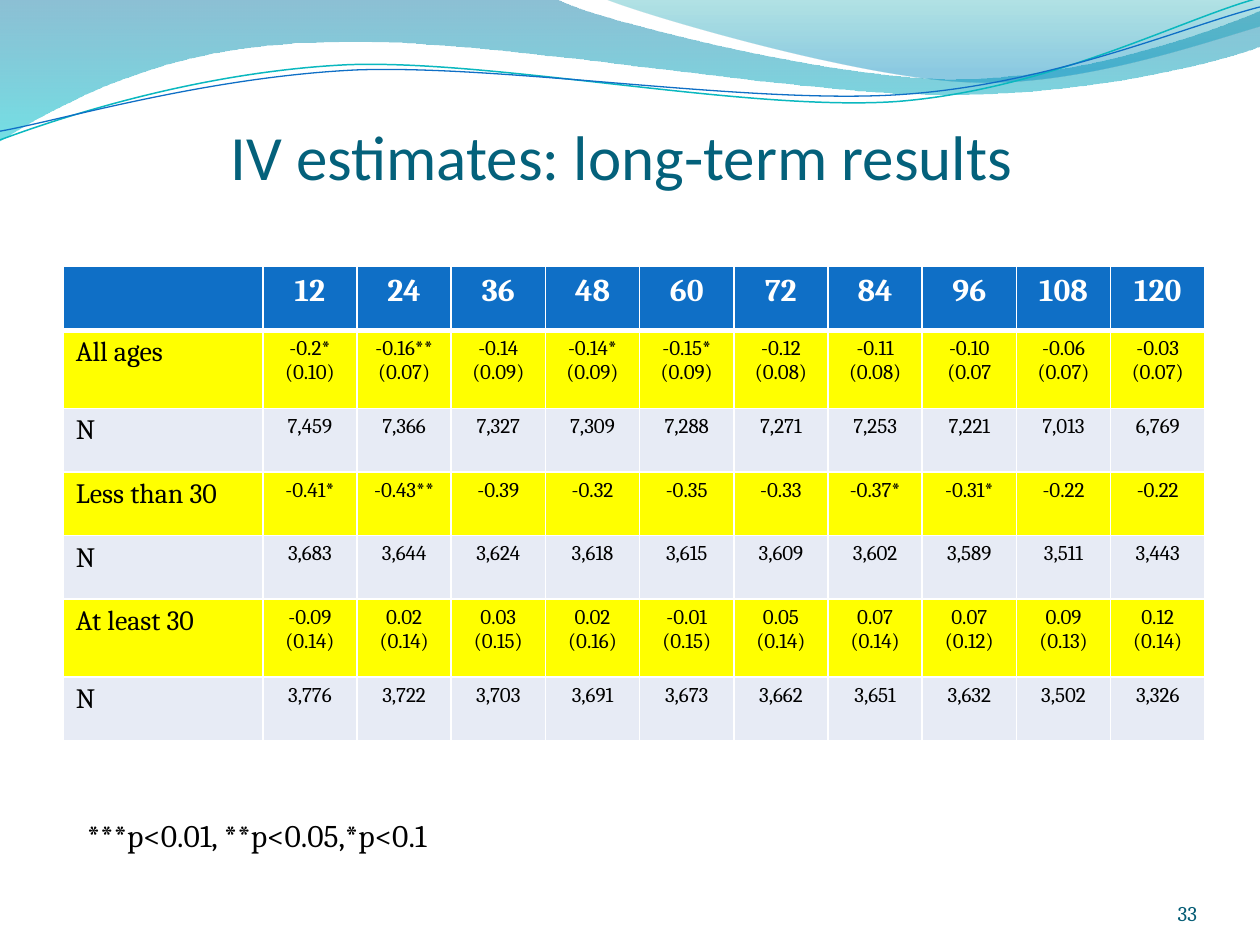
from math import cos, radians, sin

from lxml.etree import SubElement as Sub
from pptx import Presentation
from pptx.dml.color import RGBColor as Rgb
from pptx.enum.text import MSO_ANCHOR as Anchor, PP_ALIGN as Align
from pptx.oxml.ns import qn
from pptx.util import Pt

HUES = {
    "white": "FFFFFF", "black": "000000", "blue": "0F6FC6", "teal": "0AB8BF",
    "title": "04617B", "page": "045C75", "mark": "FFFF00", "pale": "E7EBF5",
    "deep": "0074A1", "cyan": "00C6CF", "sea": "00A1A9", "sky": "008BBF",
}

BANDS = [
    ([(0, -1), (317, -1), (343, 12, 478, 45, 546, 45), (614, 45, 690, 19, 720, 6),
      (721, 26), (708, 32, 626, 55, 537, 54), (448, 54, 275, 20, 185, 24),
      (93, 25, 33, 60, -1, 81), (0, -1)],
     [("deep", 0, 45), ("cyan", 1, 55)]),
    ([(345, -1), (366, 8, 491, 45, 554, 47), (616, 50, 692, 23, 720, 15), (720, 0),
      (345, -1)],
     [("sea", 0, 30), ("sky", 0.8, 45)]),
]
CURVES = [
    ([(0, 80), (35, 67, 114, 41, 199, 37), (284, 34, 427, 64, 513, 58),
      (600, 51, 675, 11, 719, -1)], "teal", 0.85),
    ([(0, 75), (34, 69, 118, 44, 204, 40), (290, 37, 430, 60, 516, 54),
      (602, 48, 677, 15, 720, 4)], "blue", 0.75),
]
TILT = 2.7

HEAD = ["", "12", "24", "36", "48", "60", "72", "84", "96", "108", "120"]
ROWS = [
    ["All ages", "-0.2*\n(0.10)", "-0.16**\n(0.07)", "-0.14\n(0.09)", "-0.14*\n(0.09)",
     "-0.15*\n(0.09)", "-0.12\n(0.08)", "-0.11\n(0.08)", "-0.10\n(0.07",
     "-0.06\n(0.07)", "-0.03\n(0.07)"],
    ["N", "7,459", "7,366", "7,327", "7,309", "7,288", "7,271", "7,253", "7,221",
     "7,013", "6,769"],
    ["Less than 30", "-0.41*", "-0.43**", "-0.39", "-0.32", "-0.35", "-0.33", "-0.37*",
     "-0.31*", "-0.22", "-0.22"],
    ["N", "3,683", "3,644", "3,624", "3,618", "3,615", "3,609", "3,602", "3,589",
     "3,511", "3,443"],
    ["At least 30", "-0.09\n(0.14)", "0.02\n(0.14)", "0.03\n(0.15)", "0.02\n(0.16)",
     "-0.01\n(0.15)", "0.05\n(0.14)", "0.07\n(0.14)", "0.07\n(0.12)",
     "0.09\n(0.13)", "0.12\n(0.14)"],
    ["N", "3,776", "3,722", "3,703", "3,691", "3,673", "3,662", "3,651", "3,632",
     "3,502", "3,326"],
]


def hue(name):
    return Rgb.from_string(HUES[name])


def write(frame, text, size=12, face="Cambria", color="black", bold=False, align=Align.LEFT):
    frame.text = text
    for para in frame.paragraphs:
        para.alignment = align
        for run in para.runs:
            font = run.font
            font.size, font.name, font.bold = Pt(size), face, bold
            font.color.rgb = hue(color)


def label(slide, box, text, inset=(7.2, 3.6, 7.2, 3.6), anchor=Anchor.TOP, **form):
    frame = slide.shapes.add_textbox(*map(Pt, box)).text_frame
    frame.word_wrap = True
    frame.vertical_anchor = anchor
    (frame.margin_left, frame.margin_top,
     frame.margin_right, frame.margin_bottom) = map(Pt, inset)
    write(frame, text, **form)


def turn(dot, box, angle):
    mid_x, mid_y = box[2] / 2, box[3] / 2
    x, y = dot[0] - mid_x, dot[1] - mid_y
    c, s = cos(radians(angle)), sin(radians(angle))
    return Pt(box[0] + mid_x + x * c - y * s), Pt(box[1] + mid_y + x * s + y * c)


def draw(slide, box, steps, close, tilt=0):
    dots = [turn(step[i:i + 2], box, tilt)
            for step in steps for i in range(0, len(step), 2)]
    pen = slide.shapes.build_freeform(*dots[0])
    pen.add_line_segments(dots[1:], close=close)
    shape = pen.convert_to_shape()
    shape.shadow.inherit = False
    shape.rotation = -tilt % 360
    lines = iter(list(shape._element.iter(qn("a:lnTo"))))
    for step in steps[1:]:
        trio = [next(lines) for _ in range(len(step) // 2)]
        if len(trio) == 3:
            trio[0].tag = qn("a:cubicBezTo")
            for line in trio[1:]:
                trio[0].append(line[0])
                line.getparent().remove(line)
    return shape


def waves(slide, box):
    for steps, stops in BANDS:
        shape = draw(slide, box, steps, True)
        shape.line.fill.background()
        shape.fill.gradient()
        shape.fill.gradient_angle = 270
        for stop, (name, place, _) in zip(shape.fill.gradient_stops, stops):
            stop.color.rgb = hue(name)
            stop.position = place
        tints = shape._element.spPr.iter(qn("a:srgbClr"))
        for tint, (_, _, alpha) in zip(list(tints), stops):
            Sub(tint, qn("a:alpha"), val=str(alpha * 1000))
    for steps, name, width in CURVES:
        shape = draw(slide, box, steps, False, TILT)
        shape.fill.background()
        shape.line.color.rgb = hue(name)
        shape.line.width = Pt(width)


def edge(cell, **sides):
    props = cell._tc.get_or_add_tcPr()
    for side in "LRTB":
        line = Sub(props, qn("a:ln" + side), w=str(Pt(sides.get(side, 1))))
        Sub(Sub(line, qn("a:solidFill")), qn("a:srgbClr"), val=HUES["white"])


def grid(slide, box):
    first, tall, plain = 114, 44.6, 36.35
    data = [HEAD] + ROWS
    table = slide.shapes.add_table(len(data), len(HEAD), *map(Pt, box)).table
    table.first_row = table.horz_banding = False
    for c, col in enumerate(table.columns):
        col.width = Pt(first if c == 0 else (box[2] - first) / (len(HEAD) - 1))
    for r, row in enumerate(data):
        table.rows[r].height = Pt(tall if "\n" in row[1] else plain)
        fill = "blue" if r == 0 else "mark" if r % 2 else "pale"
        for c, text in enumerate(row):
            cell = table.cell(r, c)
            edge(cell, T=3 if r == 1 else 1, B=3 if r == 0 else 1)
            cell.fill.solid()
            cell.fill.fore_color.rgb = hue(fill)
            write(cell.text_frame, text, size=18 if r == 0 else 12 if c else 16,
                  color="black" if r else "white", bold=r == 0,
                  align=Align.CENTER if c else Align.LEFT)


def main():
    deck = Presentation()
    deck.slide_width, deck.slide_height = Pt(720), Pt(540)
    slide = deck.slides.add_slide(deck.slide_layouts[6])
    waves(slide, (0, 0, 720, 81))
    label(slide, (31.2, 20.5, 648, 90), "IV estimates: long-term results", (0, 3.6, 0, 0),
          Anchor.BOTTOM, size=36, face="Calibri", color="title", align=Align.CENTER)
    label(slide, (624, 500.4, 60, 28.8), "33", (0, 0, 0, 0), Anchor.BOTTOM,
          color="page", align=Align.RIGHT)
    label(slide, (42.5, 463, 459, 29), "***p<0.01, **p<0.05,*p<0.1", size=18)
    grid(slide, (36.2, 152.4, 652.5, 270.95))
    deck.save("out.pptx")


if __name__ == "__main__":
    main()
